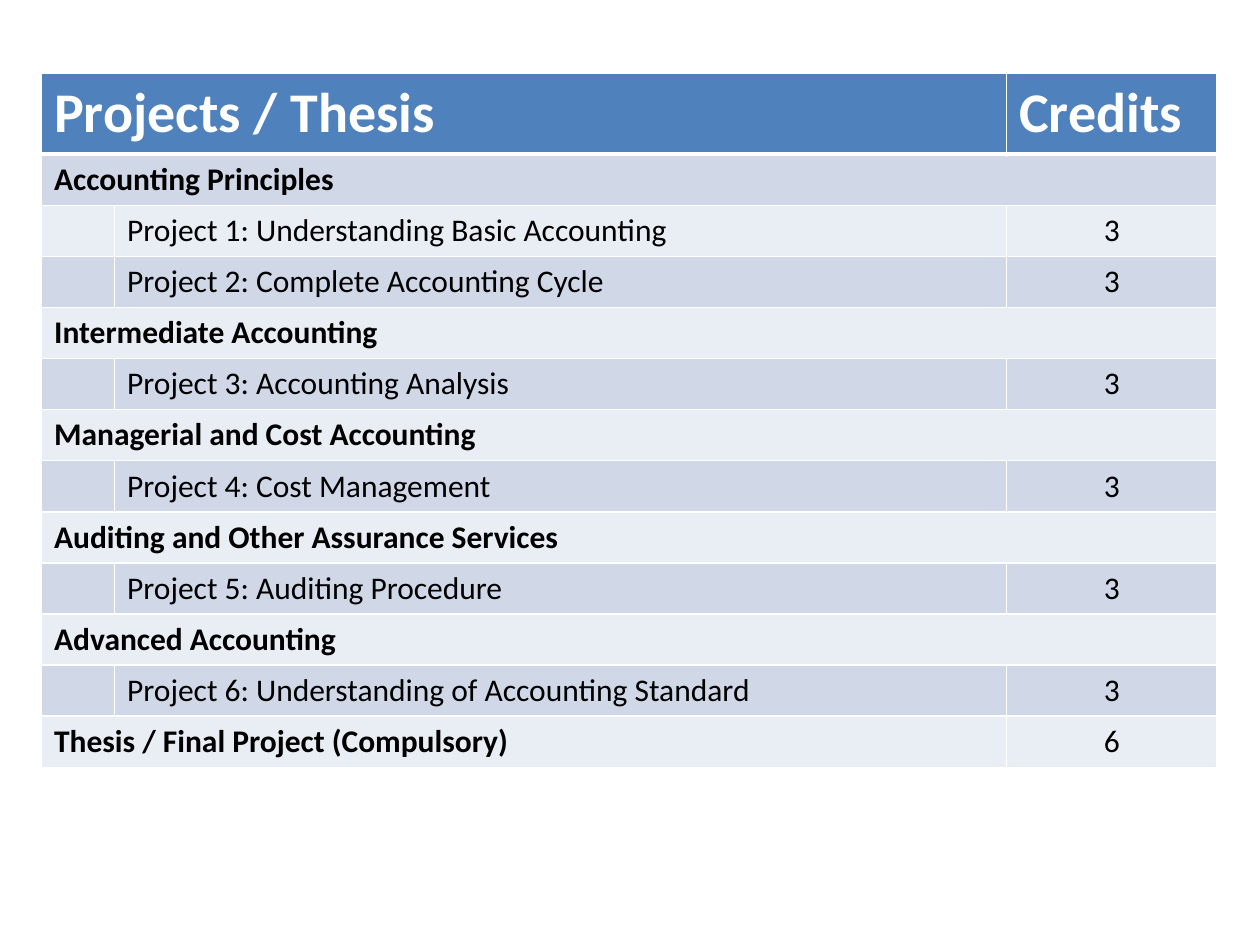
import pptx
import pptx.dml.color
import pptx.enum.text
import pptx.oxml.ns
import pptx.util
from lxml import etree

Inches = pptx.util.Inches
CENTER = pptx.enum.text.PP_ALIGN.CENTER

HEADER_FILL = "4F81BD"
BAND_FILLS = ("D0D8E8", "E9EDF4")
COLUMN_WIDTHS = (0.58, 7.08, 1.67)
HEADER_HEIGHT = 0.64
ROW_HEIGHT = 0.405

ROWS = [
    ("Accounting Principles", None, None),
    (None, "Project 1: Understanding Basic Accounting", "3"),
    (None, "Project 2: Complete Accounting Cycle", "3"),
    ("Intermediate Accounting", None, None),
    (None, "Project 3: Accounting Analysis", "3"),
    ("Managerial and Cost Accounting", None, None),
    (None, "Project 4: Cost Management", "3"),
    ("Auditing and Other Assurance Services", None, None),
    (None, "Project 5: Auditing Procedure", "3"),
    ("Advanced Accounting", None, None),
    (None, "Project 6: Understanding of Accounting Standard", "3"),
    ("Thesis / Final Project (Compulsory)", None, "6"),
]


def rgb(color):
    return pptx.dml.color.RGBColor.from_string(color)


def write_text(cell, text, size=18, color="000000", bold=False, align=None):
    p = cell.text_frame.paragraphs[0]
    p.alignment = align
    r = p.add_run()
    r.text = text
    r.font.name = "Calibri"
    r.font.size = pptx.util.Pt(size)
    r.font.bold = bold
    r.font.color.rgb = rgb(color)


def set_borders(cell, color="FFFFFF", top=1, bottom=1):
    qn = pptx.oxml.ns.qn
    tc_pr = cell._tc.get_or_add_tcPr()
    for side, width in (("L", 1), ("R", 1), ("T", top), ("B", bottom)):
        ln = etree.SubElement(tc_pr, qn(f"a:ln{side}"), w=str(pptx.util.Pt(width)))
        fill = etree.SubElement(ln, qn("a:solidFill"))
        etree.SubElement(fill, qn("a:srgbClr"), val=color)


def style_row(table, row, fill):
    for col in range(len(COLUMN_WIDTHS)):
        cell = table.cell(row, col)
        set_borders(cell, top=3 if row == 1 else 1, bottom=3 if row == 0 else 1)
        cell.fill.solid()
        cell.fill.fore_color.rgb = rgb(fill)


def add_header(table):
    style_row(table, 0, HEADER_FILL)
    table.cell(0, 0).merge(table.cell(0, 1))
    for col, text in ((0, "Projects / Thesis"), (2, "Credits")):
        write_text(table.cell(0, col), text, size=32, color="FFFFFF", bold=True)


def add_row(table, row, heading, project, credits):
    style_row(table, row, BAND_FILLS[(row - 1) % 2])
    if heading:
        table.cell(row, 0).merge(table.cell(row, 1 if credits else 2))
        write_text(table.cell(row, 0), heading, bold=True)
    if project:
        write_text(table.cell(row, 1), project)
    if credits:
        write_text(table.cell(row, 2), credits, align=CENTER)


def add_credit_table(slide):
    height = HEADER_HEIGHT + ROW_HEIGHT * len(ROWS)
    frame = slide.shapes.add_table(
        len(ROWS) + 1, len(COLUMN_WIDTHS), Inches(0.33), Inches(0.58),
        Inches(sum(COLUMN_WIDTHS)), Inches(height))
    table = frame.table
    for column, width in zip(table.columns, COLUMN_WIDTHS):
        column.width = Inches(width)
    for index, row in enumerate(table.rows):
        row.height = Inches(ROW_HEIGHT if index else HEADER_HEIGHT)
    add_header(table)
    for index, content in enumerate(ROWS, start=1):
        add_row(table, index, *content)


def main():
    prs = pptx.Presentation()
    prs.slide_width = Inches(10)
    prs.slide_height = Inches(7.5)
    slide = prs.slides.add_slide(prs.slide_layouts[6])
    add_credit_table(slide)
    prs.save("out.pptx")


if __name__ == "__main__":
    main()
